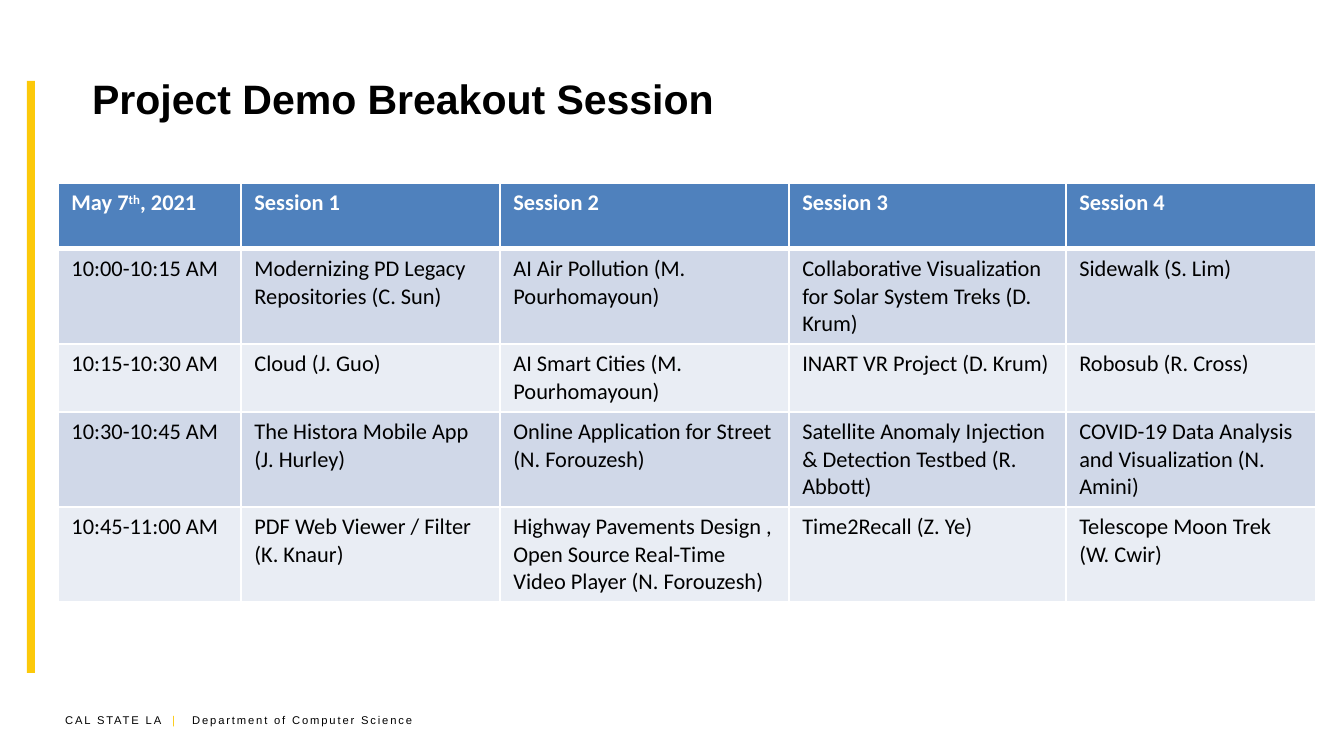
"""Build the project demo breakout session schedule slide."""
from dataclasses import dataclass

from lxml import etree
from pptx import Presentation
from pptx import util as u
from pptx.dml import color
from pptx.enum import shapes, text
from pptx.oxml import ns


@dataclass(frozen=True)
class Theme:
    """Hold the colours, fonts and type sizes."""
    ink: str = "000000"
    white: str = "FFFFFF"
    gold: str = "FCC90A"
    header: str = "4F81BD"
    bands: tuple = ("D0D8E8", "E9EDF4")
    heading_font: str = "Arial"
    table_font: str = "Calibri"
    title_size: int = 22
    table_size: int = 12
    footer_size: int = 6


SCALE = 914400 / 134.4
COLUMNS = (183, 259, 289, 277, 250)
ROWS = (66, 95, 68, 95, 95)
SCHEDULE = (
    ("May 7th, 2021", "Session 1", "Session 2", "Session 3", "Session 4"),
    ("10:00-10:15 AM", "Modernizing PD Legacy Repositories (C. Sun)",
     "AI Air Pollution (M. Pourhomayoun)",
     "Collaborative Visualization for Solar System Treks (D. Krum)",
     "Sidewalk (S. Lim)"),
    ("10:15-10:30 AM", "Cloud (J. Guo)", "AI Smart Cities (M. Pourhomayoun)",
     "INART VR Project (D. Krum)", "Robosub (R. Cross)"),
    ("10:30-10:45 AM", "The Histora Mobile App (J. Hurley)",
     "Online Application for Street (N. Forouzesh)",
     "Satellite Anomaly Injection & Detection Testbed (R. Abbott)",
     "COVID-19 Data Analysis and Visualization (N. Amini)"),
    ("10:45-11:00 AM", "PDF Web Viewer / Filter (K. Knaur)",
     "Highway Pavements Design , Open Source Real-Time Video Player (N. Forouzesh)",
     "Time2Recall (Z. Ye)", "Telescope Moon Trek (W. Cwir)"),
)


def px(length):
    """Turn pixels into EMU."""
    return u.Emu(round(length * SCALE))


class SlideBuilder:
    """Draw styled elements on the current slide."""

    def __init__(self, slide, theme):
        """Keep the slide and its theme."""
        self.slide = slide
        self.theme = theme

    def format_run(self, run, size, font, ink, bold=False):
        """Apply the type style to a run."""
        run.font.size = u.Pt(size)
        run.font.name = font
        run.font.bold = bold
        run.font.color.rgb = color.RGBColor.from_string(ink)

    def fill_runs(self, paragraph, pieces):
        """Replace the paragraph's text by one run per piece."""
        paragraph.text = ""
        for piece in pieces:
            paragraph.add_run().text = piece
        return paragraph.runs

    def bar(self, left, top, width, height):
        """Draw a plain accent bar."""
        shape = self.slide.shapes.add_shape(
            shapes.MSO_SHAPE.RECTANGLE, *map(px, (left, top, width, height)))
        shape.shadow.inherit = False
        shape.fill.solid()
        shape.fill.fore_color.rgb = color.RGBColor.from_string(self.theme.gold)
        shape.line.fill.background()

    def text_box(self, left, top, width, height):
        """Add a wrapping, vertically centred text box and return its paragraph."""
        box = self.slide.shapes.add_textbox(*map(px, (left, top, width, height)))
        box.text_frame.word_wrap = True
        box.text_frame.vertical_anchor = text.MSO_ANCHOR.MIDDLE
        return box.text_frame.paragraphs[0]

    def title(self, wording, *place):
        """Write the slide title."""
        paragraph = self.text_box(*place)
        paragraph.text = wording
        self.format_run(paragraph.runs[0], self.theme.title_size,
                        self.theme.heading_font, self.theme.ink, True)

    def footer(self, pieces, stops, *place):
        """Write letterspaced footer pieces, with a gold divider, at tab stops."""
        paragraph = self.text_box(*place)
        properties = paragraph._p.get_or_add_pPr()
        tabs = etree.SubElement(properties, ns.qn("a:tabLst"))
        for stop in stops:
            etree.SubElement(tabs, ns.qn("a:tab"), pos=str(px(stop)), algn="l")
        inks = (self.theme.ink, self.theme.gold, self.theme.ink)
        for run, ink in zip(self.fill_runs(paragraph, pieces), inks):
            self.format_run(run, self.theme.footer_size, self.theme.heading_font, ink)
            run._r.get_or_add_rPr().set("spc", "100")

    def border(self, cell, side, points):
        """Give one side of a cell a white line."""
        line = etree.SubElement(cell._tc.get_or_add_tcPr(), ns.qn(f"a:ln{side}"),
                                w=str(u.Pt(points)))
        fill = etree.SubElement(line, ns.qn("a:solidFill"))
        etree.SubElement(fill, ns.qn("a:srgbClr"), val=self.theme.white)

    def cell(self, cell, wording, row):
        """Fill, border and write one table cell."""
        is_header = row == 0
        widths = {"L": 1, "R": 1, "T": 3 if row == 1 else 1, "B": 3 if is_header else 1}
        for side, points in widths.items():
            self.border(cell, side, points)
        fill = self.theme.header if is_header else self.theme.bands[(row - 1) % 2]
        cell.fill.solid()
        cell.fill.fore_color.rgb = color.RGBColor.from_string(fill)
        cell.text_frame.text = wording
        paragraph = cell.text_frame.paragraphs[0]
        before, ordinal, after = wording.partition("th,")
        if ordinal:
            runs = self.fill_runs(paragraph, (before, "th", "," + after))
            runs[1]._r.get_or_add_rPr().set("baseline", "30000")
        ink = self.theme.white if is_header else self.theme.ink
        for run in paragraph.runs:
            self.format_run(run, self.theme.table_size, self.theme.table_font, ink, is_header)

    def table(self, rows, left, top, widths, heights):
        """Draw a header row and banded body rows."""
        frame = self.slide.shapes.add_table(
            len(heights), len(widths),
            *map(px, (left, top, sum(widths), sum(heights))))
        for column, width in zip(frame.table.columns, widths):
            column.width = px(width)
        for row, height in zip(frame.table.rows, heights):
            row.height = px(height)
        for row, wordings in enumerate(rows):
            for column, wording in enumerate(wordings):
                self.cell(frame.table.cell(row, column), wording, row)


def main():
    """Build and save the presentation."""
    presentation = Presentation()
    presentation.slide_width, presentation.slide_height = px(1344), px(756)
    slide = presentation.slides.add_slide(presentation.slide_layouts[6])
    builder = SlideBuilder(slide, Theme())
    builder.footer(("CAL STATE LA", "\t|", "\tDepartment of Computer Science"),
                   (107, 127), 52, 707, 392, 27)
    builder.bar(27, 81, 8, 592)
    builder.title("Project Demo Breakout Session", 79, 35, 1193, 127)
    builder.table(SCHEDULE, 58, 183, COLUMNS, ROWS)
    presentation.save("out.pptx")


if __name__ == "__main__":
    main()
